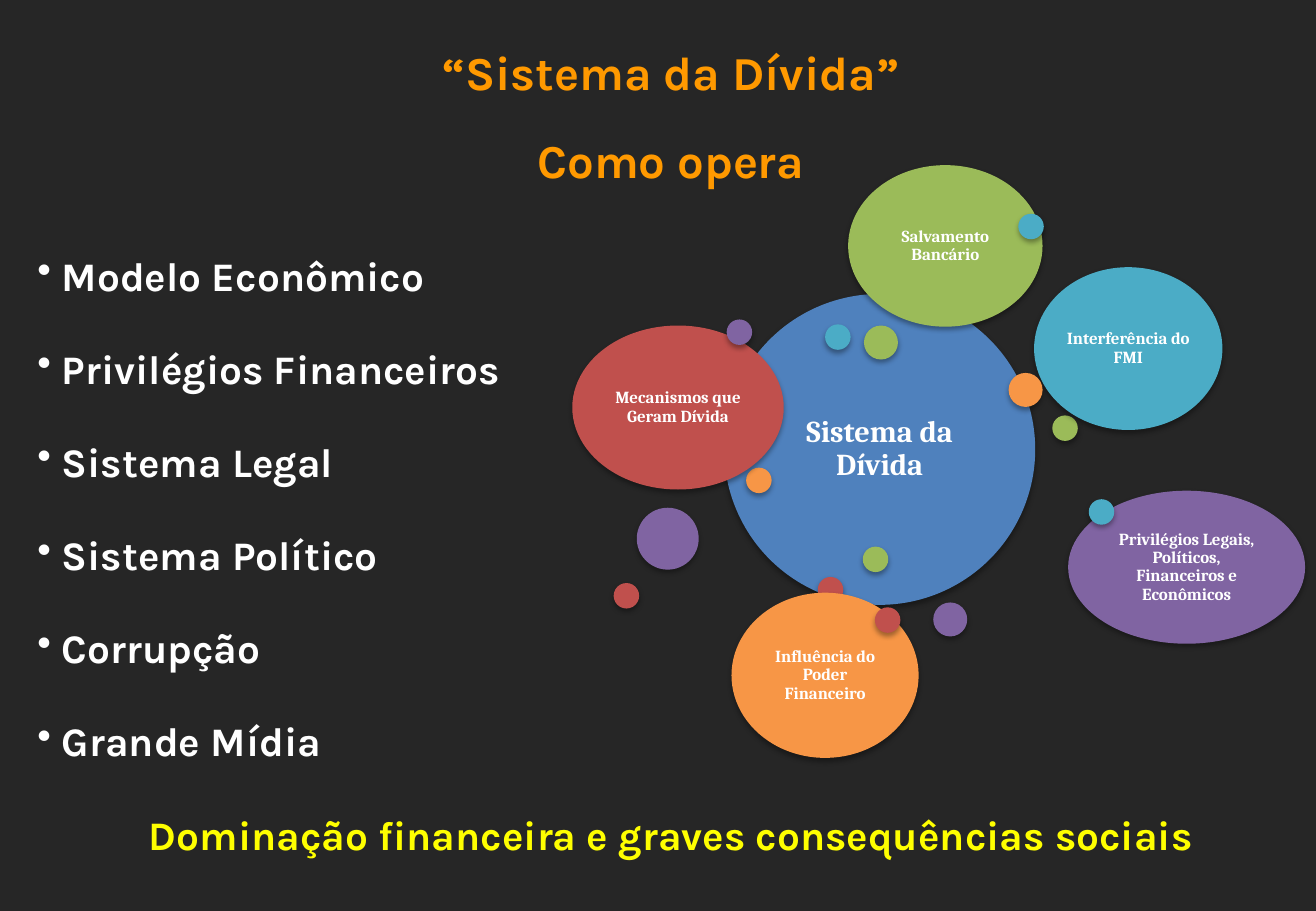
from lxml import etree
from pptx import Presentation
from pptx.dml.color import RGBColor
from pptx.enum.shapes import MSO_SHAPE
from pptx.enum.text import MSO_ANCHOR, PP_ALIGN
from pptx.oxml.ns import qn
from pptx.util import Inches, Pt

OVAL = MSO_SHAPE.OVAL
MIDDLE = MSO_ANCHOR.MIDDLE
CENTER, JUSTIFY = PP_ALIGN.CENTER, PP_ALIGN.JUSTIFY

COLORS = {
    "background": "262626", "title": "FF9900", "white": "FFFFFF",
    "conclusion": "FFFF00", "shadow": "000000", "blue": "4F81BD",
    "red": "C0504D", "green": "9BBB59", "purple": "8064A2",
    "aqua": "4BACC6", "orange": "F79646",
}
SMALL, MEDIUM, LARGE = 0.21, 0.28, 0.51

TITLE_LINES = ["“Sistema da Dívida”", "Como opera"]
PILLARS = [
    "Modelo Econômico", "Privilégios Financeiros", "Sistema Legal",
    "Sistema Político", "Corrupção", "Grande Mídia",
]
CONCLUSION = "Dominação financeira e graves consequências sociais"

# Back to front: left, top, width, height, colour, label
BUBBLES = [
    (5.96, 2.42, 2.56, 2.56, "blue", "Sistema da Dívida"),
    (6.73, 4.75, SMALL, SMALL, "red", ""),
    (8.66, 3.42, SMALL, SMALL, "green", ""),
    (7.68, 4.96, MEDIUM, MEDIUM, "purple", ""),
    (6.79, 2.67, SMALL, SMALL, "aqua", ""),
    (6.14, 3.85, SMALL, SMALL, "orange", ""),
    (4.71, 2.68, 1.74, 1.35, "red", "Mecanismos que Geram Dívida"),
    (7.11, 2.68, MEDIUM, MEDIUM, "green", ""),
    (5.24, 4.18, LARGE, LARGE, "purple", ""),
    (8.51, 2.2, 1.55, 1.34, "aqua", "Interferência do FMI"),
    (8.3, 3.07, MEDIUM, MEDIUM, "orange", ""),
    (5.05, 4.8, SMALL, SMALL, "red", ""),
    (7.1, 4.5, SMALL, SMALL, "green", ""),
    (8.79, 4.04, 1.95, 1.26, "purple",
     "Privilégios Legais, Políticos, Financeiros e Econômicos"),
    (8.96, 4.11, SMALL, SMALL, "aqua", ""),
    (6.02, 4.88, 1.54, 1.36, "orange", "Influência do Poder Financeiro"),
    (7.2, 5, SMALL, SMALL, "red", ""),
    (6.98, 1.36, 1.6, 1.33, "green", "Salvamento Bancário"),
    (5.98, 2.63, SMALL, SMALL, "purple", ""),
    (8.38, 1.76, SMALL, SMALL, "aqua", ""),
]


def rgb(name):
    return RGBColor.from_string(COLORS[name])


def write(paragraph, text, *, size, color="white", font="Karla", align=CENTER,
          spacing=1.0, before=0, after=0, bullet=False):
    paragraph.alignment = align
    paragraph.line_spacing = spacing
    paragraph.space_before = Pt(before)
    paragraph.space_after = Pt(after)
    if bullet:
        add_bullet(paragraph)
    run = paragraph.add_run()
    run.text = text
    run.font.name = font
    run.font.size = Pt(size)
    run.font.bold = True
    run.font.color.rgb = rgb(color)


def add_bullet(paragraph):
    properties = paragraph._p.get_or_add_pPr()
    properties.set("marL", str(Inches(0.2)))
    properties.set("indent", str(-Inches(0.2)))
    etree.SubElement(properties, qn("a:buChar"), char="•")


def add_soft_shadow(shape):
    shape.shadow.inherit = False
    effects = shape._element.spPr.find(qn("a:effectLst"))
    shadow = etree.SubElement(
        effects, qn("a:outerShdw"), blurRad=str(Pt(3.1)), dist=str(Pt(1.8)),
        dir="5400000", rotWithShape="0")
    color = etree.SubElement(shadow, qn("a:srgbClr"), val=COLORS["shadow"])
    etree.SubElement(color, qn("a:alpha"), val="35000")


def set_margins(frame, inset):
    frame.margin_left = frame.margin_right = Inches(inset)
    frame.margin_top = frame.margin_bottom = Inches(inset)


def add_bubble(slide, left, top, width, height, color, label):
    bubble = slide.shapes.add_shape(
        OVAL, Inches(left), Inches(top), Inches(width), Inches(height))
    bubble.fill.solid()
    bubble.fill.fore_color.rgb = rgb(color)
    bubble.line.fill.background()
    add_soft_shadow(bubble)
    if label:
        is_core = color == "blue"
        frame = bubble.text_frame
        frame.word_wrap = True
        frame.vertical_anchor = MIDDLE
        set_margins(frame, 0.07 if is_core else 0.04)
        write(frame.paragraphs[0], label, size=18 if is_core else 10,
              font="Cambria", spacing=0.9)


def add_outline(slide):
    """Add the title, the bulleted pillars and the conclusion."""
    frame = slide.shapes.add_textbox(
        Inches(0.21), Inches(0.21), Inches(10.62), Inches(6.95)).text_frame
    frame.word_wrap = True
    first, second = frame.paragraphs[0], frame.add_paragraph()
    for paragraph, line in zip((first, second), TITLE_LINES):
        write(paragraph, line, size=28, color="title", spacing=1.2, before=12)
    for index, pillar in enumerate(PILLARS):
        write(frame.add_paragraph(), pillar, size=24, align=JUSTIFY,
              spacing=1.5, before=0 if index else 23, after=12, bullet=True)
    write(frame.add_paragraph(), CONCLUSION, size=24, color="conclusion",
          spacing=1.5, after=12)


def main():
    deck = Presentation()
    deck.slide_width, deck.slide_height = Inches(10.83), Inches(7.5)
    slide = deck.slides.add_slide(deck.slide_layouts[6])
    slide.background.fill.solid()
    slide.background.fill.fore_color.rgb = rgb("background")
    add_outline(slide)
    for bubble in BUBBLES:
        add_bubble(slide, *bubble)
    deck.save("out.pptx")


if __name__ == "__main__":
    main()
